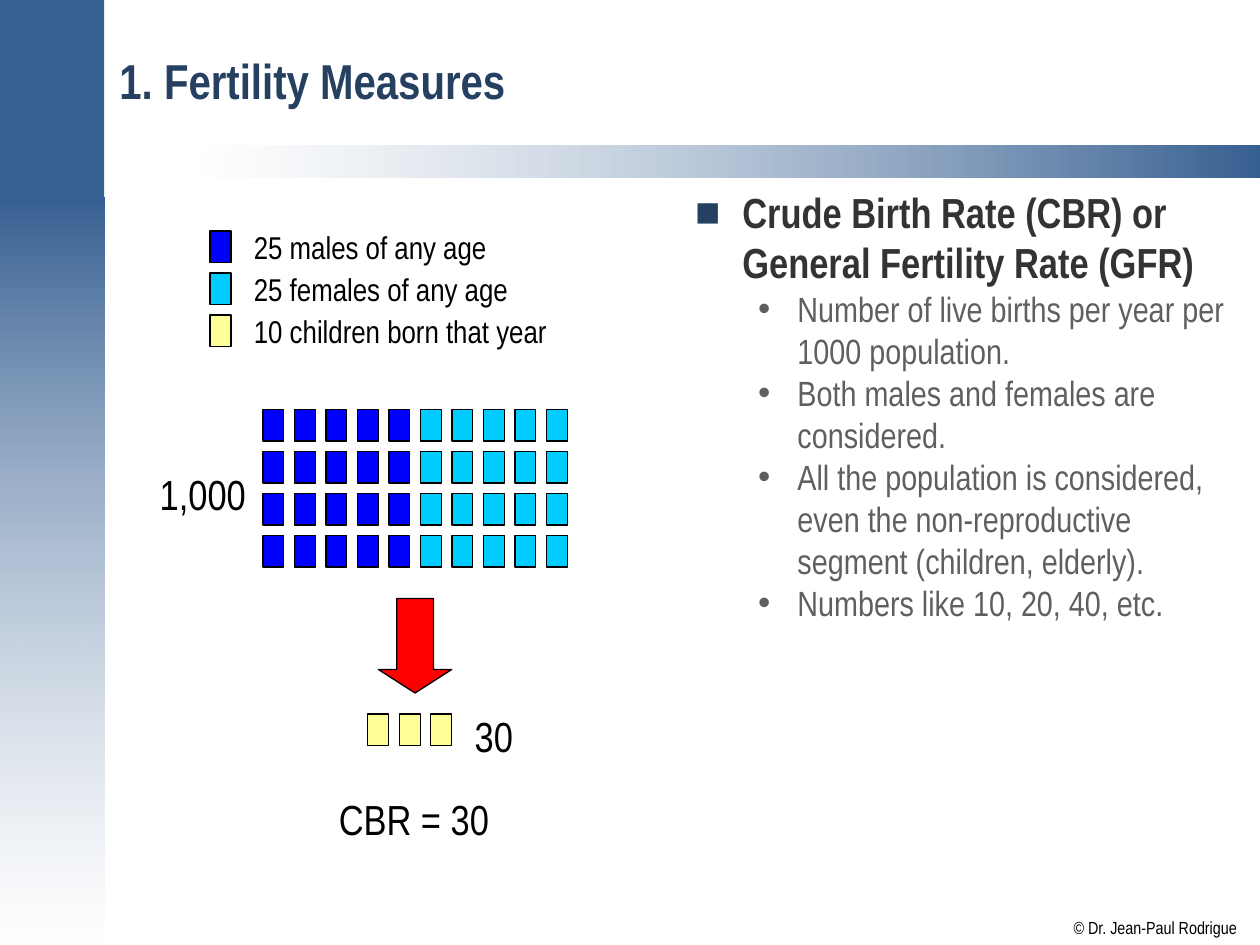
from lxml import etree
from pptx import Presentation
from pptx.dml.color import RGBColor
from pptx.enum.shapes import MSO_SHAPE
from pptx.enum.text import MSO_ANCHOR, MSO_AUTO_SIZE, PP_ALIGN
from pptx.oxml.ns import qn
from pptx.util import Pt

RECTANGLE = MSO_SHAPE.RECTANGLE
DOWN_ARROW = MSO_SHAPE.DOWN_ARROW
MIDDLE, TOP = MSO_ANCHOR.MIDDLE, MSO_ANCHOR.TOP
NO_AUTOFIT = MSO_AUTO_SIZE.NONE
LEFT = PP_ALIGN.LEFT

FONT = "Arial Narrow"
BLUE, NAVY, WHITE, BLACK = "376092", "254061", "FFFFFF", "000000"
MALE, FEMALE, CHILD, RED = "0000FF", "00CCFF", "FFFF99", "FF0000"

PERSON_WIDTH, PERSON_HEIGHT = 12, 18
COLUMN_STEP, ROW_STEP = 18, 24

LEGEND = [
    (MALE, "25 males of any age"),
    (FEMALE, "25 females of any age"),
    (CHILD, "10 children born that year"),
]
HEADING = "Crude Birth Rate (CBR) or General Fertility Rate (GFR)"
POINTS = [
    "Number of live births per year per 1000 population.",
    "Both males and females are considered.",
    "All the population is considered, even the non-reproductive segment (children, elderly).",
    "Numbers like 10, 20, 40, etc.",
]


def color(hex_string):
    return RGBColor.from_string(hex_string)


def place(shape, box):
    shape.left, shape.top, shape.width, shape.height = (Pt(value) for value in box)


def write(paragraph, text, size=18, fill=BLACK, bold=False):
    run = paragraph.add_run()
    run.text = text
    run.font.name, run.font.size, run.font.bold = FONT, Pt(size), bold
    run.font.color.rgb = color(fill)


def add_label(slide, box, text, size=18, inset=None):
    label = slide.shapes.add_textbox(*(Pt(value) for value in box))
    frame = label.text_frame
    frame.word_wrap = False
    if inset is not None:
        frame.margin_left = frame.margin_right = Pt(inset)
        frame.margin_top = frame.margin_bottom = Pt(inset)
    write(frame.paragraphs[0], text, size)


def add_block(slide, box, fill, line=None, kind=RECTANGLE):
    block = slide.shapes.add_shape(kind, *(Pt(value) for value in box))
    block.shadow.inherit = False
    block.fill.solid()
    block.fill.fore_color.rgb = color(fill)
    if line:
        block.line.color.rgb = color(line)
        block.line.width = Pt(0.75)
    else:
        block.line.fill.background()
    return block


def add_gradient(slide, box, start, end, angle, clear_stop):
    """Blend start into end; the stop numbered clear_stop is half transparent."""
    block = add_block(slide, box, start)
    block.fill.gradient()
    block.fill.gradient_angle = angle
    stops = block.fill.gradient_stops
    for stop, fill, position in zip(stops, (start, end), (0, 1)):
        stop.color.rgb = color(fill)
        stop.position = position
    tint = list(block._element.iter(qn("a:gs")))[clear_stop][0]
    etree.SubElement(tint, qn("a:alpha"), val="50000")


def add_people(slide, left, top, columns, rows, fill):
    for row in range(rows):
        for column in range(columns):
            box = (left + column * COLUMN_STEP, top + row * ROW_STEP,
                   PERSON_WIDTH, PERSON_HEIGHT)
            add_block(slide, box, fill, BLACK)


def add_background(slide, width, height):
    side_width, split = 60, 113
    add_gradient(slide, (-0.5, split, side_width, height - split), BLUE, WHITE, 270, 1)
    add_gradient(slide, (113, 83, width - 113, 18.7), WHITE, BLUE, 0, 0)
    add_block(slide, (-0.5, -0.5, side_width, split + 0.5), BLUE)
    add_label(slide, (613.5, 524, 93.5, 12.2), "© Dr. Jean-Paul Rodrigue", 10, inset=0)


def fill_title(title, box):
    place(title, box)
    frame = title.text_frame
    frame.vertical_anchor = MIDDLE
    frame.auto_size = NO_AUTOFIT
    paragraph = frame.paragraphs[0]
    paragraph.alignment = LEFT
    write(paragraph, "1. Fertility Measures", 28, NAVY, bold=True)


def add_bullet(paragraph, character, fill, left, hanging):
    properties = paragraph._p.get_or_add_pPr()
    properties.set("marL", str(Pt(left)))
    properties.set("indent", str(-Pt(hanging)))
    bullet_color = etree.SubElement(properties, qn("a:buClr"))
    etree.SubElement(bullet_color, qn("a:srgbClr"), val=fill)
    etree.SubElement(properties, qn("a:buFont"), typeface="Arial")
    etree.SubElement(properties, qn("a:buChar"), char=character)


def fill_body(body, box):
    place(body, box)
    frame = body.text_frame
    frame.vertical_anchor = TOP
    frame.auto_size = NO_AUTOFIT
    heading = frame.paragraphs[0]
    heading.space_before = Pt(0)
    add_bullet(heading, "■", NAVY, 27, 27)
    write(heading, HEADING, 24, "333333", bold=True)
    for text in POINTS:
        paragraph = frame.add_paragraph()
        paragraph.level = 1
        paragraph.space_before = Pt(0)
        add_bullet(paragraph, "•", "5F5F5F", 58.5, 22.5)
        write(paragraph, text, 20, "5F5F5F")


def add_legend(slide, left, top):
    for index, (fill, text) in enumerate(LEGEND):
        row_top = top + index * ROW_STEP
        add_people(slide, left, row_top, 1, 1, fill)
        add_label(slide, (left + 18, row_top - 5.3, 182, 29), text)


def add_diagram(slide, left, top):
    # Population: five columns of males, then five of females
    for index, fill in enumerate((MALE, FEMALE)):
        add_people(slide, left + index * 5 * COLUMN_STEP, top, 5, 4, fill)
    add_label(slide, (left - 66, top + 30, 64, 36), "1,000", 24)
    # Births
    arrow = add_block(slide, (left + 66, top + 108, 42, 54), RED, BLACK, DOWN_ARROW)
    arrow.adjustments[0], arrow.adjustments[1] = 0.5, 0.32
    add_people(slide, left + 60, top + 174, 3, 1, CHILD)
    add_label(slide, (left + 114, top + 168.5, 37, 36), "30", 24)
    # Resulting rate
    add_label(slide, (left + 36.3, top + 216, 101, 36), "CBR = 30", 24)


def main():
    width, height = 720, 540
    presentation = Presentation()
    presentation.slide_width, presentation.slide_height = Pt(width), Pt(height)
    slide = presentation.slides.add_slide(presentation.slide_layouts[1])
    add_background(slide, width, height)
    fill_title(slide.shapes.title, (61, 8, 646.5, 75))
    fill_body(slide.placeholders[1], (390, 103, 319, 417))
    add_legend(slide, 120, 132)
    add_diagram(slide, 150.2, 234)
    presentation.save("out.pptx")


if __name__ == "__main__":
    main()
